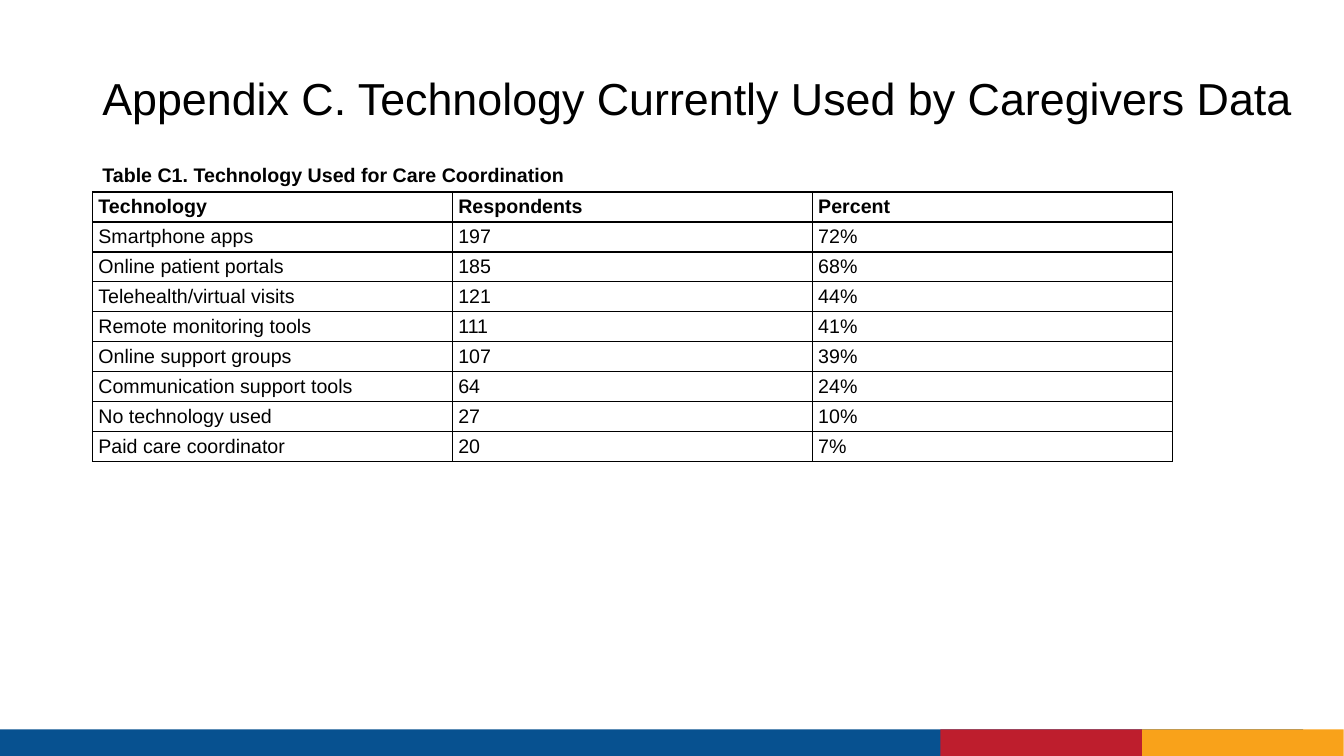
from dataclasses import dataclass

import lxml.etree
import pptx
import pptx.dml.color
import pptx.enum.shapes
import pptx.enum.text
import pptx.oxml
import pptx.oxml.ns
import pptx.slide
import pptx.text.text
import pptx.util

Cm = pptx.util.Cm
Pt = pptx.util.Pt
Anchor = pptx.enum.text.MSO_ANCHOR


@dataclass(frozen=True)
class Theme:
    font: str = "Arial"
    text: str = "000000"
    blue: str = "075190"
    red: str = "BE1E2D"
    orange: str = "F9A21A"
    title_size: int = 32
    body_size: int = 14
    border_pt: int = 1


@dataclass(frozen=True)
class Box:
    left: float
    top: float
    width: float
    height: float

    def lengths(self) -> list[pptx.util.Length]:
        return [Cm(v) for v in (self.left, self.top, self.width, self.height)]


@dataclass(frozen=True)
class Band:
    left: float
    width: float
    color: str


@dataclass(frozen=True)
class Label:
    text: str
    box: Box
    size: int
    bold: bool
    frame: dict
    paragraph: dict


THEME = Theme()
BAND_TOP, BAND_HEIGHT = 18.38, 0.69
BANDS = [
    Band(0, 32.84, THEME.blue),
    Band(28.78, 5.08, THEME.orange),
    Band(23.7, 5.08, THEME.red),
]
LABELS = [
    Label("Appendix C. Technology Currently Used by Caregivers Data",
          Box(2.33, 1.73, 31.04, 1.55), THEME.title_size, False,
          {"vertical_anchor": Anchor.BOTTOM}, {"line_spacing": 0.9}),
    Label("Table C1. Technology Used for Care Coordination",
          Box(2.33, 3.99, 16.94, 0.86), THEME.body_size, True,
          {"auto_size": pptx.enum.text.MSO_AUTO_SIZE.SHAPE_TO_FIT_TEXT}, {}),
]
TABLE_BOX = Box(2.33, 4.84, 27.21, 6.68)
CELL_FORMAT = {
    "vertical_anchor": Anchor.MIDDLE,
    "margin_left": Cm(0.15), "margin_right": Cm(0.15),
    "margin_top": Cm(0.08), "margin_bottom": Cm(0.08),
}
ROWS = [
    ("Technology", "Respondents", "Percent"),
    ("Smartphone apps", "197", "72%"),
    ("Online patient portals", "185", "68%"),
    ("Telehealth/virtual visits", "121", "44%"),
    ("Remote monitoring tools", "111", "41%"),
    ("Online support groups", "107", "39%"),
    ("Communication support tools", "64", "24%"),
    ("No technology used", "27", "10%"),
    ("Paid care coordinator", "20", "7%"),
]


def rgb(color: str) -> pptx.dml.color.RGBColor:
    return pptx.dml.color.RGBColor.from_string(color)


def apply(target: object, values: dict) -> None:
    for name, value in values.items():
        setattr(target, name, value)


def write(tf: pptx.text.text.TextFrame, text: str, size: int, bold: bool) -> None:
    r = tf.paragraphs[0].add_run()
    r.text = text
    apply(r.font, {"name": THEME.font, "size": Pt(size), "bold": bold})
    r.font.color.rgb = rgb(THEME.text)


def draw_band(s: pptx.slide.Slide, band: Band) -> None:
    box = Box(band.left, BAND_TOP, band.width, BAND_HEIGHT)
    sp = s.shapes.add_shape(pptx.enum.shapes.MSO_SHAPE.RECTANGLE, *box.lengths())
    sp.shadow.inherit = False
    sp.fill.solid()
    sp.fill.fore_color.rgb = rgb(band.color)
    sp.line.fill.background()


def draw_label(s: pptx.slide.Slide, label: Label) -> None:
    tf = s.shapes.add_textbox(*label.box.lengths()).text_frame
    apply(tf, {"word_wrap": True, **label.frame})
    apply(tf.paragraphs[0], label.paragraph)
    write(tf, label.text, label.size, label.bold)


def add_borders(tc_pr: lxml.etree.ElementBase) -> None:
    # Borders come before the fill in the cell properties
    for i, side in enumerate(("lnL", "lnR", "lnT", "lnB")):
        tc_pr.insert(i, pptx.oxml.parse_xml(
            f'<a:{side} {pptx.oxml.ns.nsdecls("a")} w="{Pt(THEME.border_pt)}">'
            f'<a:solidFill><a:srgbClr val="{THEME.text}"/></a:solidFill></a:{side}>'))


def draw_table(s: pptx.slide.Slide, rows: list[tuple[str, ...]], box: Box) -> None:
    table = s.shapes.add_table(len(rows), len(rows[0]), *box.lengths()).table
    apply(table, {"first_row": False, "horz_banding": False})
    for i, row in enumerate(rows):
        for j, text in enumerate(row):
            cell = table.cell(i, j)
            apply(cell, CELL_FORMAT)
            cell.fill.background()
            add_borders(cell._tc.get_or_add_tcPr())
            write(cell.text_frame, text, THEME.body_size, i == 0)


def main() -> None:
    prs = pptx.Presentation()
    apply(prs, {"slide_width": Cm(33.87), "slide_height": Cm(19.05)})
    s = prs.slides.add_slide(prs.slide_layouts[6])

    # Footer bands
    for band in BANDS:
        draw_band(s, band)

    # Title and table caption
    for label in LABELS:
        draw_label(s, label)

    # Technology table
    draw_table(s, ROWS, TABLE_BOX)

    prs.save("out.pptx")


if __name__ == "__main__":
    main()
